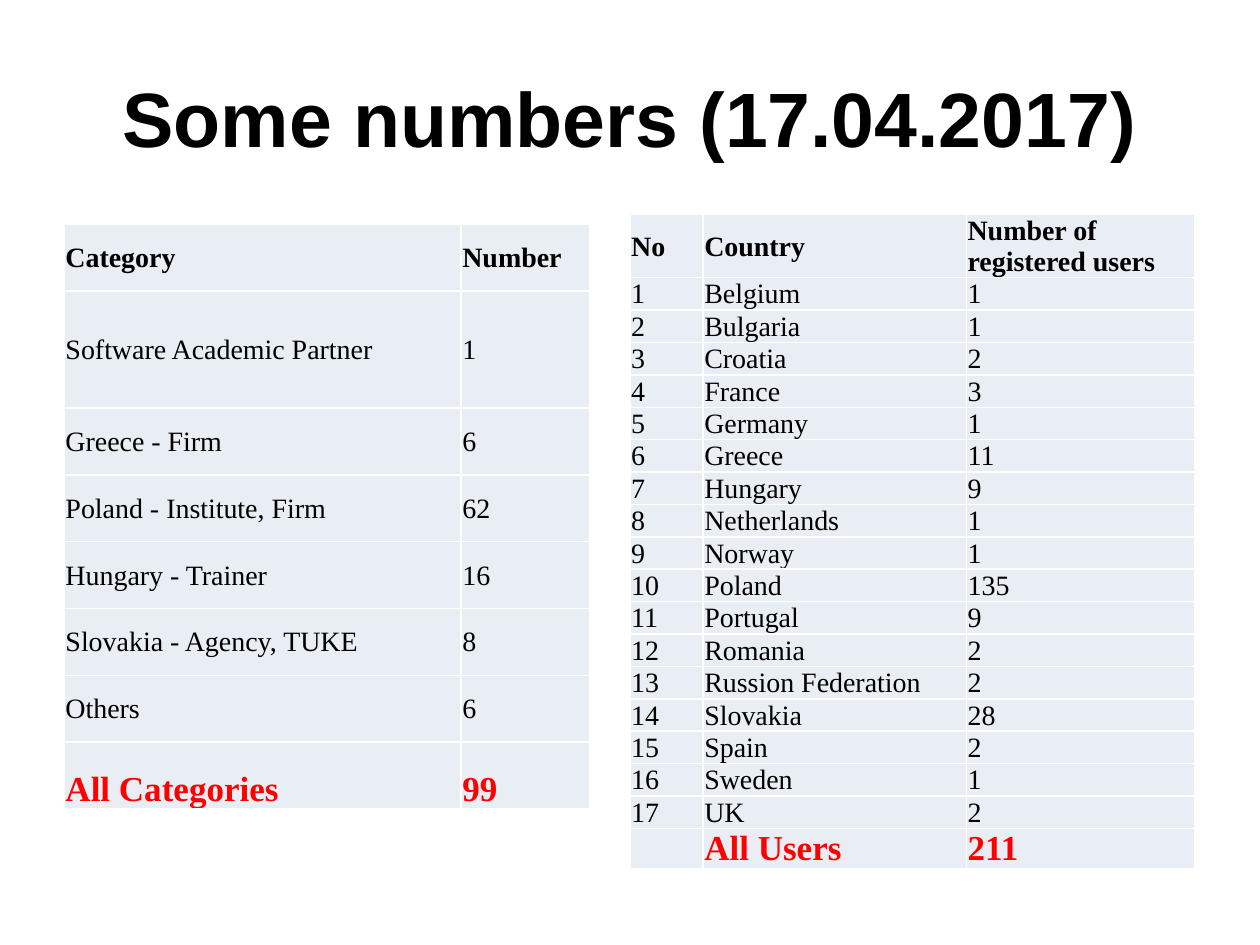
from lxml.etree import SubElement
from pptx import Presentation
from pptx.dml.color import RGBColor
from pptx.enum.text import MSO_ANCHOR, MSO_AUTO_SIZE, PP_ALIGN
from pptx.oxml.ns import qn
from pptx.util import Inches, Pt


def color(value):
    return RGBColor.from_string(value)


def add_number_table(page, left, top, widths, heights, rows, total_anchor):
    frame = page.shapes.add_table(
        len(rows), len(widths), Inches(left), Inches(top),
        Inches(sum(widths)), Inches(sum(heights)))
    table = frame.table
    table.first_row = False
    table.horz_banding = False
    for column, width in zip(table.columns, widths):
        column.width = Inches(width)
    for row, height in zip(table.rows, heights):
        row.height = Inches(height)
    last = len(rows) - 1
    for row_index, values in enumerate(rows):
        is_total = row_index == last
        for column_index, value in enumerate(values):
            cell = table.cell(row_index, column_index)
            cell.margin_left = cell.margin_right = cell.margin_top = Inches(0.01)
            cell.margin_bottom = 0
            cell.vertical_anchor = total_anchor if is_total else MSO_ANCHOR.MIDDLE
            cell.text = str(value)
            font = cell.text_frame.paragraphs[0].font
            font.name = "Times New Roman"
            font.size = Pt(20 if is_total else 16)
            font.bold = row_index in (0, last)
            font.color.rgb = color("FF0000" if is_total else "000000")
            properties = cell._tc.get_or_add_tcPr()
            for side in ("a:lnL", "a:lnR", "a:lnT", "a:lnB"):
                line = SubElement(properties, qn(side), w=str(Pt(1)))
                fill = SubElement(line, qn("a:solidFill"))
                SubElement(fill, qn("a:srgbClr"), val="FFFFFF")
            cell.fill.solid()
            cell.fill.fore_color.rgb = color("E9EDF4")


deck = Presentation()
deck.slide_width = Inches(10)
deck.slide_height = Inches(7.5)
page = deck.slides.add_slide(deck.slide_layouts[5])

title = page.shapes.title
title.left, title.top = Inches(0.5), Inches(0.3)
title.width, title.height = Inches(9), Inches(1.25)
title_frame = title.text_frame
title_frame.text = "Some numbers (17.04.2017)"
title_frame.auto_size = MSO_AUTO_SIZE.NONE
title_frame.vertical_anchor = MSO_ANCHOR.MIDDLE
title_frame.margin_left = title_frame.margin_right = 0
title_frame.margin_top = title_frame.margin_bottom = 0
paragraph = title_frame.paragraphs[0]
paragraph.alignment = PP_ALIGN.CENTER
paragraph.font.name = "Arial"
paragraph.font.size = Pt(44)
paragraph.font.bold = True
paragraph.font.color.rgb = color("000000")

categories = [
    ("Category", "Number"),
    ("Software Academic Partner", 1),
    ("Greece - Firm", 6),
    ("Poland - Institute, Firm", 62),
    ("Hungary - Trainer", 16),
    ("Slovakia - Agency, TUKE", 8),
    ("Others", 6),
    ("All Categories", 99),
]
add_number_table(page, 0.51, 1.78, [3.15, 1.02], [0.53, 0.93] + [0.53] * 6,
                 categories, MSO_ANCHOR.BOTTOM)

users = [
    ("Belgium", 1), ("Bulgaria", 1), ("Croatia", 2), ("France", 3),
    ("Germany", 1), ("Greece", 11), ("Hungary", 9), ("Netherlands", 1),
    ("Norway", 1), ("Poland", 135), ("Portugal", 9), ("Romania", 2),
    ("Russion Federation", 2), ("Slovakia", 28), ("Spain", 2),
    ("Sweden", 1), ("UK", 2),
]
countries = [("No", "Country", "Number of registered users")]
countries += [(number, *entry) for number, entry in enumerate(users, 1)]
countries.append(("", "All Users", 211))
add_number_table(page, 5, 1.7, [0.58, 2.09, 1.81], [0.43] + [0.25] * 18,
                 countries, MSO_ANCHOR.MIDDLE)

deck.save("out.pptx")
